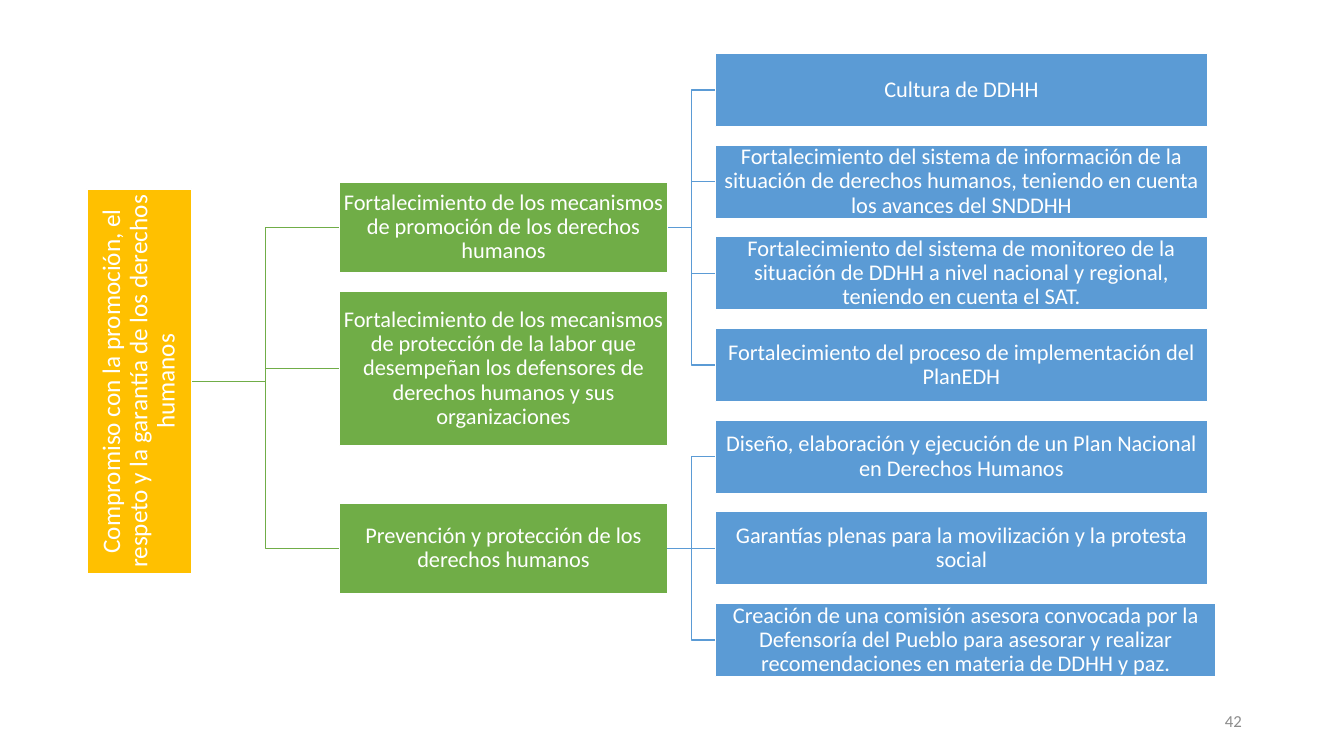
from dataclasses import dataclass, field

from lxml import etree
from pptx import Presentation
from pptx.dml.color import RGBColor
from pptx.enum.shapes import MSO_CONNECTOR, MSO_SHAPE
from pptx.enum.text import MSO_ANCHOR, PP_ALIGN
from pptx.oxml.ns import qn
from pptx.shapes.autoshape import Shape
from pptx.slide import Slide
from pptx.text.text import TextFrame
from pptx.util import Cm, Pt

RECTANGLE = MSO_SHAPE.RECTANGLE
STRAIGHT = MSO_CONNECTOR.STRAIGHT
MIDDLE = MSO_ANCHOR.MIDDLE
CENTER = PP_ALIGN.CENTER
RIGHT = PP_ALIGN.RIGHT
LEFT_SIDE, RIGHT_SIDE = 1, 3


@dataclass(frozen=True)
class Theme:
    font: str = "Calibri"
    white: RGBColor = RGBColor(0xFF, 0xFF, 0xFF)
    gold: RGBColor = RGBColor(0xFF, 0xC0, 0x00)
    green: RGBColor = RGBColor(0x70, 0xAD, 0x47)
    blue: RGBColor = RGBColor(0x5B, 0x9B, 0xD5)
    gray: RGBColor = RGBColor(0x8C, 0x8C, 0x8C)
    root_size: int = 18
    box_size: int = 16
    number_size: int = 12
    line_width: int = 1


THEME = Theme()
LEAF_FIRST, LEAF_PITCH = 2.27, 2.31


@dataclass
class Node:
    text: str
    left: float
    middle: float
    width: float
    height: float
    color: RGBColor
    size: int = THEME.box_size
    vertical: bool = False
    children: list["Node"] = field(default_factory=list)

    @property
    def right(self) -> float:
        return self.left + self.width


def leaf(row: int, text: str, width: float = 12.4) -> Node:
    middle = LEAF_FIRST + row * LEAF_PITCH
    return Node(text, 18.03, middle, width, 1.85, THEME.blue)


def branch(text: str, middle: float, height: float, leaves: list[Node]) -> Node:
    return Node(text, 8.56, middle, 8.26, height, THEME.green, children=leaves)


def leaf_middle(first: int, last: int) -> float:
    return LEAF_FIRST + (first + last) / 2 * LEAF_PITCH


PROMOTION = branch(
    "Fortalecimiento de los mecanismos de promoción de los derechos humanos",
    leaf_middle(0, 3), 2.29,
    [
        leaf(0, "Cultura de DDHH"),
        leaf(1, "Fortalecimiento del sistema de información de la situación de "
                "derechos humanos, teniendo en cuenta los avances del SNDDHH"),
        leaf(2, "Fortalecimiento del sistema de monitoreo de la situación de DDHH "
                "a nivel nacional y regional, teniendo en cuenta el SAT."),
        leaf(3, "Fortalecimiento del proceso de implementación del PlanEDH"),
    ],
)
DEFENDERS = branch(
    "Fortalecimiento de los mecanismos de protección de la labor que desempeñan "
    "los defensores de derechos humanos y sus organizaciones",
    9.29, 3.89, [],
)
PREVENTION = branch(
    "Prevención y protección de los derechos humanos",
    leaf_middle(4, 6), 2.29,
    [
        leaf(4, "Diseño, elaboración y ejecución de un Plan Nacional en Derechos Humanos"),
        leaf(5, "Garantías plenas para la movilización y la protesta social"),
        leaf(6, "Creación de una comisión asesora convocada por la Defensoría del "
                "Pueblo para asesorar y realizar recomendaciones en materia de "
                "DDHH y paz.", 12.62),
    ],
)
ROOT = Node(
    "Compromiso con la promoción, el respeto y la garantía de los derechos humanos",
    2.19, 9.61, 2.64, 9.7, THEME.gold, THEME.root_size, True,
    [PROMOTION, DEFENDERS, PREVENTION],
)


def is_level(parent: Node, child: Node) -> bool:
    return abs(parent.middle - child.middle) < 0.01


def write(frame: TextFrame, text: str, size: int, color: RGBColor, align: PP_ALIGN) -> None:
    frame.word_wrap = True
    frame.vertical_anchor = MIDDLE
    para = frame.paragraphs[0]
    para.alignment = align
    span = para.add_run()
    span.text = text
    span.font.name = THEME.font
    span.font.size = Pt(size)
    span.font.color.rgb = color


def draw_elbow(page: Slide, parent: Node, child: Node) -> None:
    turn = Cm((parent.right + child.left) / 2)
    start, end = Cm(parent.middle), Cm(child.middle)
    builder = page.shapes.build_freeform(Cm(parent.right), start)
    builder.add_line_segments([(turn, start), (turn, end), (Cm(child.left), end)], close=False)
    elbow = builder.convert_to_shape()
    elbow.shadow.inherit = False
    elbow.fill.background()
    elbow.line.color.rgb = child.color
    elbow.line.width = Pt(THEME.line_width)


def draw_straight(page: Slide, start: Shape, end: Shape, color: RGBColor) -> None:
    line = page.shapes.add_connector(STRAIGHT, 0, 0, 0, 0)
    line.begin_connect(start, RIGHT_SIDE)
    line.end_connect(end, LEFT_SIDE)
    line.line.color.rgb = color
    line.line.width = Pt(THEME.line_width)
    etree.SubElement(line._element.spPr, qn("a:effectLst"))


def draw_box(page: Slide, node: Node) -> Shape:
    width, height = (node.height, node.width) if node.vertical else (node.width, node.height)
    left = node.left + (node.width - width) / 2
    box = page.shapes.add_shape(
        RECTANGLE, Cm(left), Cm(node.middle - height / 2), Cm(width), Cm(height))
    box.rotation = 270 if node.vertical else 0
    box.shadow.inherit = False
    box.fill.solid()
    box.fill.fore_color.rgb = node.color
    box.line.color.rgb = THEME.white
    box.line.width = Pt(THEME.line_width)
    frame = box.text_frame
    frame.margin_left = frame.margin_right = Cm(0.03)
    frame.margin_top = frame.margin_bottom = Cm(0.03)
    write(frame, node.text, node.size, THEME.white, CENTER)
    frame.paragraphs[0].line_spacing = 0.9
    return box


def draw_elbows(page: Slide, node: Node) -> None:
    for child in node.children:
        draw_elbows(page, child)
        if not is_level(node, child):
            draw_elbow(page, node, child)


def draw_tree(page: Slide, node: Node) -> Shape:
    box = draw_box(page, node)
    for child in node.children:
        child_box = draw_tree(page, child)
        if is_level(node, child):
            draw_straight(page, box, child_box, child.color)
    return box


def draw_page_number(page: Slide, number: str) -> None:
    box = page.shapes.add_textbox(Cm(23.93), Cm(17.65), Cm(7.62), Cm(1.02))
    write(box.text_frame, number, THEME.number_size, THEME.gray, RIGHT)


def main() -> None:
    deck = Presentation()
    deck.slide_width, deck.slide_height = Cm(33.87), Cm(19.05)
    page = deck.slides.add_slide(deck.slide_layouts[6])
    draw_page_number(page, "42")
    draw_elbows(page, ROOT)
    draw_tree(page, ROOT)
    deck.save("out.pptx")


if __name__ == "__main__":
    main()
